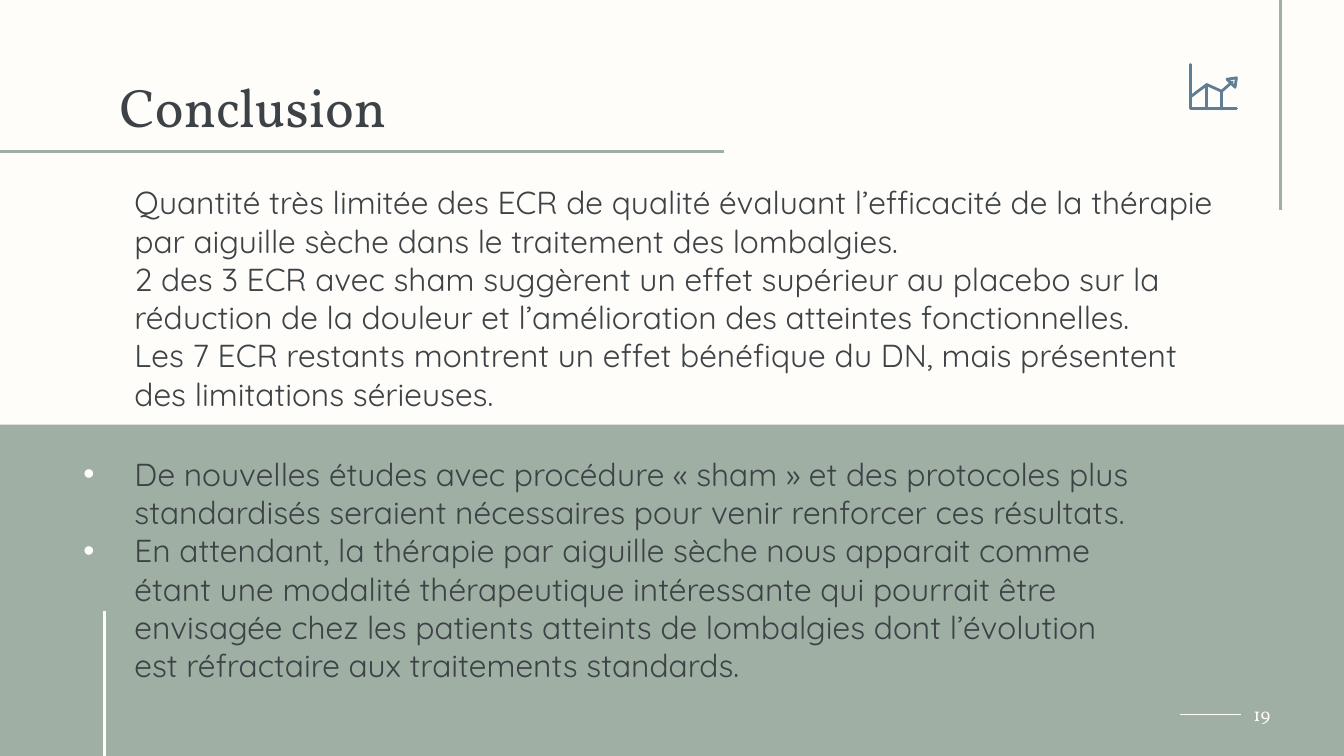
from lxml.etree import SubElement
from pptx import Presentation
from pptx.dml.color import RGBColor
from pptx.enum.shapes import MSO_CONNECTOR, MSO_SHAPE
from pptx.enum.text import MSO_ANCHOR, MSO_AUTO_SIZE, PP_ALIGN
from pptx.oxml.ns import qn
from pptx.util import Inches, Pt

CREAM = RGBColor(0xFF, 0xFD, 0xF9)
SAGE = RGBColor(0x9F, 0xAF, 0xA4)
INK = RGBColor(0x3D, 0x42, 0x46)
STEEL = RGBColor(0x5F, 0x7D, 0x95)
WIDTH = 10
HEIGHT = WIDTH * 9 / 16
FINDINGS = [
    "Quantité très limitée des ECR de qualité évaluant l’efficacité de la thérapie par aiguille sèche dans le traitement des lombalgies.",
    "2 des 3 ECR avec sham suggèrent un effet supérieur au placebo sur la réduction de la douleur et l’amélioration des atteintes fonctionnelles.",
    "Les 7 ECR restants montrent un effet bénéfique du DN, mais présentent des limitations sérieuses.",
]
OUTLOOK = [
    "De nouvelles études avec procédure « sham » et des protocoles plus standardisés seraient nécessaires pour venir renforcer ces résultats.",
    "En attendant, la thérapie par aiguille sèche nous apparait comme étant une modalité thérapeutique intéressante qui pourrait être envisagée chez les patients atteints de lombalgies dont l’évolution est réfractaire aux traitements standards.",
]


def place(shape, box):
    """Move a shape to a box of left, top, width and height in inches."""
    shape.left, shape.top, shape.width, shape.height = map(Inches, box)


def style_frame(frame, anchor):
    """Give a text frame even margins, wrapping and an anchor."""
    frame.word_wrap = True
    frame.auto_size = MSO_AUTO_SIZE.NONE
    frame.vertical_anchor = anchor
    frame.margin_left = frame.margin_right = Inches(0.1)
    frame.margin_top = frame.margin_bottom = Inches(0.1)


def style_para(para, font_name, size, color, align=PP_ALIGN.LEFT):
    """Align a paragraph and format its runs."""
    para.alignment = align
    para.space_before = para.space_after = Pt(0)
    for span in para.runs:
        span.font.name = font_name
        span.font.size = Pt(size)
        span.font.color.rgb = color


def add_bullet(para, color):
    """Hang a round bullet in front of a paragraph."""
    properties = para._p.get_or_add_pPr()
    properties.set("marL", str(Inches(0.5)))
    properties.set("indent", str(Inches(-0.38)))
    bullet_color = SubElement(properties, qn("a:buClr"))
    SubElement(bullet_color, qn("a:srgbClr")).set("val", str(color))
    SubElement(properties, qn("a:buFont")).set("typeface", "Arial")
    SubElement(properties, qn("a:buChar")).set("char", "•")


def add_rule(page, start, end, color, weight=1.5):
    """Draw a straight rule between two points in inches."""
    rule = page.shapes.add_connector(
        MSO_CONNECTOR.STRAIGHT, *map(Inches, start + end))
    rule.line.color.rgb = color
    rule.line.width = Pt(weight)
    SubElement(rule._element.spPr, qn("a:effectLst"))


def add_band(page, box):
    """Lay the sage band behind everything else."""
    band = page.shapes.add_shape(MSO_SHAPE.RECTANGLE, *map(Inches, box))
    band.shadow.inherit = False
    band.fill.solid()
    band.fill.fore_color.rgb = SAGE
    band.line.fill.background()
    page.shapes._spTree.insert(2, band._element)


def fill_title(title, text, box):
    """Set the slide title."""
    place(title, box)
    style_frame(title.text_frame, MSO_ANCHOR.MIDDLE)
    title.text_frame.text = text
    style_para(title.text_frame.paragraphs[0], "Vollkorn", 29, INK)


def fill_list(body, items, box):
    """Set a bulleted list centred on the height of its box."""
    place(body, box)
    frame = body.text_frame
    style_frame(frame, MSO_ANCHOR.MIDDLE)
    frame.text = "\n".join(items)
    for para in frame.paragraphs:
        para.line_spacing = Pt(20.5)
        style_para(para, "Quicksand", 17, INK)
        add_bullet(para, CREAM)


def add_page_number(page, number, box):
    """Write the page number with a short rule on its left."""
    left, top, _, height = box
    label = page.shapes.add_textbox(*map(Inches, box))
    style_frame(label.text_frame, MSO_ANCHOR.TOP)
    label.text_frame.text = number
    style_para(label.text_frame.paragraphs[0], "Vollkorn", 10, CREAM, PP_ALIGN.RIGHT)
    middle = top + height / 2
    add_rule(page, (left - 0.17, middle), (left + 0.28, middle), CREAM, 0.75)


def add_chart_icon(page, left, top):
    """Draw a small rising chart in hundredths of an inch."""
    strokes = [
        ([(0, 0), (0, 33), (34, 33)], False),
        ([(0, 24), (12, 15), (23, 20), (31, 13)], False),
        ([(12, 15), (12, 33)], False),
        ([(23, 20), (23, 33)], False),
        ([(27, 11), (34, 10), (33, 17)], True),
    ]
    builder = page.shapes.build_freeform(0, 0, scale=Inches(0.01))
    for points, closed in strokes:
        builder.move_to(*points[0])
        builder.add_line_segments(points[1:], close=closed)
    icon = builder.convert_to_shape(Inches(left), Inches(top))
    icon.shadow.inherit = False
    icon.fill.background()
    icon.line.color.rgb = STEEL
    icon.line.width = Pt(1.5)
    outline = icon.line._get_or_add_ln()
    outline.set("cap", "rnd")
    SubElement(outline, qn("a:round"))


def build_conclusion(deck):
    """Build the conclusion slide."""
    page = deck.slides.add_slide(deck.slide_layouts[3])
    page.background.fill.solid()
    page.background.fill.fore_color.rgb = CREAM
    title, findings, outlook = page.placeholders
    add_band(page, (-0.03, 3.16, WIDTH + 0.06, HEIGHT - 3.16))
    fill_title(title, "Conclusion", (0.79, 0.47, 8.43, 0.63))
    fill_list(findings, FINDINGS, (0.4, 1.95, 8.74, 0.53))
    fill_list(outlook, OUTLOOK, (0.4, 3.97, 8.24, 0.53))
    add_page_number(page, "19", (8.95, 5.13, 0.6, 0.37))
    add_rule(page, (-0.04, 1.13), (5.39, 1.13), SAGE)
    add_rule(page, (9.53, 0), (9.53, 1.56), SAGE)
    add_rule(page, (0.78, 4.55), (0.78, HEIGHT), CREAM)
    add_chart_icon(page, 8.86, 0.48)


def main():
    """Create and save the deck."""
    deck = Presentation()
    deck.slide_width, deck.slide_height = Inches(WIDTH), Inches(HEIGHT)
    build_conclusion(deck)
    deck.save("out.pptx")


if __name__ == "__main__":
    main()
